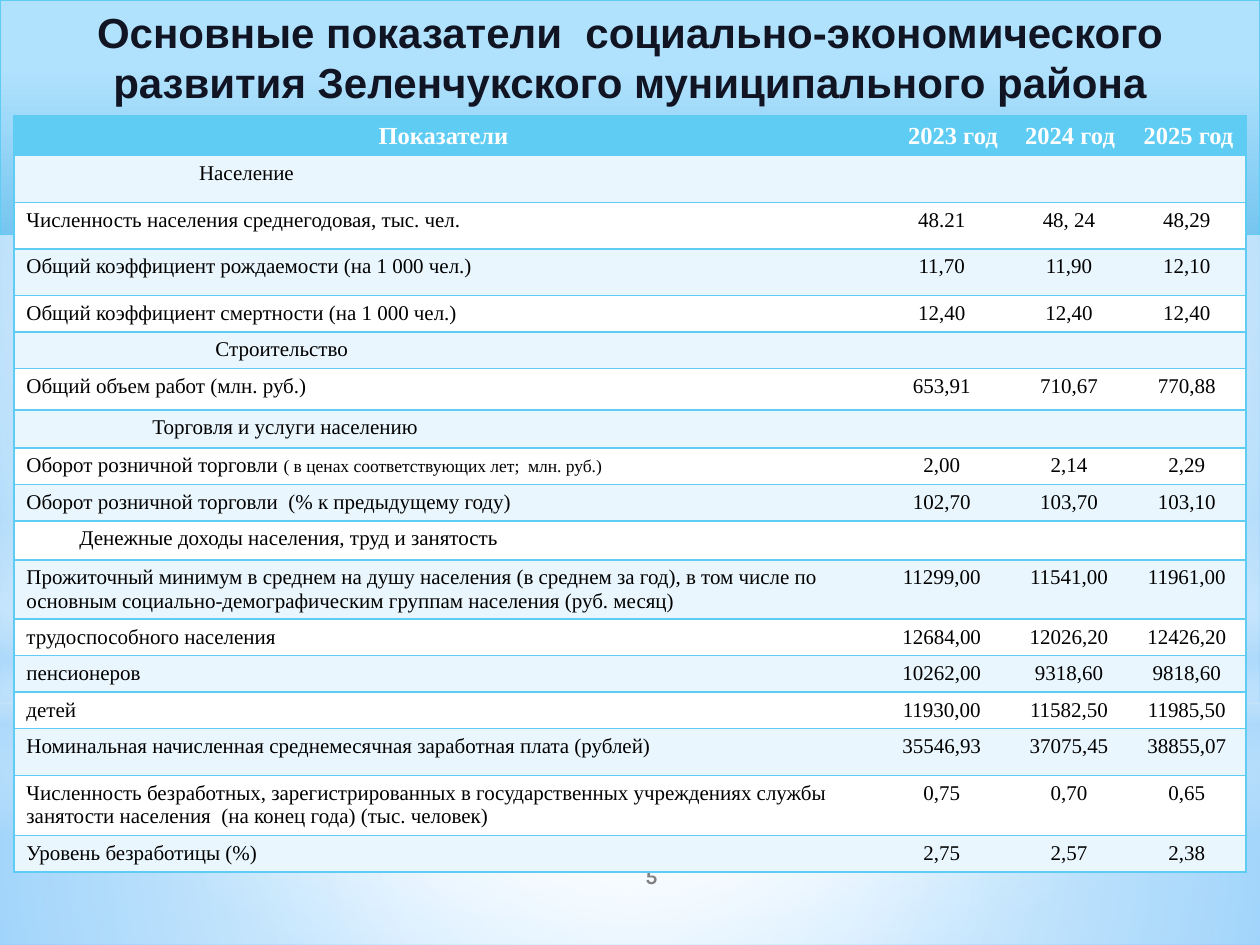
from lxml import etree
from pptx import Presentation
from pptx.dml.color import RGBColor
from pptx.enum.shapes import MSO_SHAPE
from pptx.enum.text import MSO_ANCHOR, MSO_AUTO_SIZE, PP_ALIGN
from pptx.oxml import parse_xml
from pptx.oxml.ns import qn
from pptx.util import Inches, Pt

LEFT, CENTER, RIGHT = PP_ALIGN.LEFT, PP_ALIGN.CENTER, PP_ALIGN.RIGHT
TOP, MIDDLE = MSO_ANCHOR.TOP, MSO_ANCHOR.MIDDLE
RECT, OVAL = MSO_SHAPE.RECTANGLE, MSO_SHAPE.OVAL
NO_AUTOFIT = MSO_AUTO_SIZE.NONE
DRAWING_NS = "http://schemas.openxmlformats.org/drawingml/2006/main"
PLAIN_TABLE_STYLE = "{2D5ABB26-0587-4C30-8999-92F81FD0307C}"

COLORS = {
    "accent": "5ECCF3", "band": "EAF6FD", "white": "FFFFFF", "black": "000000",
    "title": "111422", "number": "808080", "haze": "B4DCFA",
    "title_top": "B1E2FD", "title_bottom": "76C6F1",
    "sky": "9ED5FF", "deep_sky": "5BB9FF",
}

TITLE = "Основные показатели  социально-экономического развития Зеленчукского муниципального района"
PAGE_NUMBER = "5"
CENTERED = (50, 50, 50, 50)

BACKGROUND = [(0, "sky", 100), (60, "white", 100), (100, "deep_sky", 100)]
TITLE_GRADIENT = [(28, "title_top", 100), (100, "title_bottom", 100)]
BACKDROP = [
    (RECT, (0, 5.58, 10, 1.92), [(0, "white", 91), (37, "white", 76), (100, "haze", 79)], CENTERED),
    (RECT, (0, 0, 10, 5.58), [(0, "white", 89), (48, "white", 62), (100, "haze", 79)], CENTERED),
    (RECT, (0, 4.12, 10, 2.5), [(0, "white", 0), (29, "white", 30), (45, "haze", 40),
                                (55, "white", 26), (65, "haze", 60), (100, "white", 0)], None),
    (OVAL, (0, 1.75, 10, 5.58), [(0, "white", 100), (56, "white", 0)], CENTERED),
]

COLUMN_WIDTHS = [6.82, 1.09, 0.93, 0.94]
HEADER = ["Показатели", "2023 год", "2024 год", "2025 год"]
SECTION_INDENTS = {
    "Население": 1.37,
    "Строительство": 1.5,
    "Торговля и услуги населению": 1.0,
    "Денежные доходы населения, труд и занятость": 0.42,
}
SMALL_NOTE = "( в ценах соответствующих лет;  млн. руб.)"
INDICATORS = [
    (0.37, "Население"),
    (0.37, "Численность населения среднегодовая, тыс. чел.", "48.21", "48, 24", "48,29"),
    (0.37, "Общий коэффициент рождаемости (на 1 000 чел.)", "11,70", "11,90", "12,10"),
    (0.29, "Общий коэффициент смертности (на 1 000 чел.)", "12,40", "12,40", "12,40"),
    (0.29, "Строительство"),
    (0.33, "Общий объем работ (млн. руб.)", "653,91", "710,67", "770,88"),
    (0.3, "Торговля и услуги населению"),
    (0.29, "Оборот розничной торговли ", "2,00", "2,14", "2,29"),
    (0.29, "Оборот розничной торговли  (% к предыдущему году)", "102,70", "103,70", "103,10"),
    (0.31, "Денежные доходы населения, труд и занятость"),
    (0.47, "Прожиточный минимум в среднем на душу населения (в среднем за год), в том числе по "
           "основным социально-демографическим группам населения (руб. месяц)",
     "11299,00", "11541,00", "11961,00"),
    (0.29, "трудоспособного населения", "12684,00", "12026,20", "12426,20"),
    (0.29, "пенсионеров", "10262,00", "9318,60", "9818,60"),
    (0.29, "детей", "11930,00", "11582,50", "11985,50"),
    (0.37, "Номинальная начисленная среднемесячная заработная плата (рублей)",
     "35546,93", "37075,45", "38855,07"),
    (0.48, "Численность безработных, зарегистрированных в государственных учреждениях службы "
           "занятости населения  (на конец года) (тыс. человек)", "0,75", "0,70", "0,65"),
    (0.29, "Уровень безработицы (%)", "2,75", "2,57", "2,38"),
]


def rgb(name):
    return RGBColor.from_string(COLORS[name])


def set_gradient(fill, owner, stops, focus=None):
    fill.gradient()
    stop_xml = "".join(
        f'<a:gs pos="{pos * 1000}"><a:srgbClr val="{COLORS[color]}">'
        f'<a:alpha val="{alpha * 1000}"/></a:srgbClr></a:gs>'
        for pos, color, alpha in stops)
    if focus:
        sides = " ".join(f'{side}="{value * 1000}"' for side, value in zip("ltrb", focus))
        shade = f'<a:path path="circle"><a:fillToRect {sides}/></a:path>'
    else:
        shade = '<a:lin ang="5400000" scaled="0"/>'
    gradient = parse_xml(f'<a:gradFill xmlns:a="{DRAWING_NS}" rotWithShape="1">'
                         f'<a:gsLst>{stop_xml}</a:gsLst>{shade}</a:gradFill>')
    current = next(owner.iter(qn("a:gradFill")))
    current.getparent().replace(current, gradient)


def format_runs(paragraph, font_name, size, color, bold=False, align=LEFT):
    paragraph.alignment = align
    for run in paragraph.runs:
        run.font.name = font_name
        run.font.size = Pt(size)
        run.font.bold = bold
        run.font.color.rgb = rgb(color)


def add_borders(cell, sides):
    properties = cell._tc.get_or_add_tcPr()
    for side in sides:
        border = etree.SubElement(properties, qn(f"a:ln{side}"), w=str(Pt(1)))
        solid = etree.SubElement(border, qn("a:solidFill"))
        etree.SubElement(solid, qn("a:srgbClr"), val=COLORS["accent"])


def fill_cell(cell, text, fill, sides, size, color, bold, align):
    add_borders(cell, sides)
    cell.fill.solid()
    cell.fill.fore_color.rgb = rgb(fill)
    paragraph = cell.text_frame.paragraphs[0]
    paragraph.text = text
    format_runs(paragraph, "Times New Roman", size, color, bold, align)
    return paragraph


def add_indicator_table(slide):
    heights = [0.31] + [row[0] for row in INDICATORS]
    table = slide.shapes.add_table(
        len(heights), len(HEADER), Inches(0.11), Inches(0.92),
        Inches(sum(COLUMN_WIDTHS)), Inches(sum(heights))).table
    table._tbl.tblPr.find(qn("a:tableStyleId")).text = PLAIN_TABLE_STYLE
    for column, width in zip(table.columns, COLUMN_WIDTHS):
        column.width = Inches(width)
    for row, height in zip(table.rows, heights):
        row.height = Inches(height)

    last = len(HEADER) - 1
    edges = [(["L"] if c == 0 else []) + (["R"] if c == last else []) + ["T", "B"]
             for c in range(len(HEADER))]
    for c, year in enumerate(HEADER):
        fill_cell(table.cell(0, c), year, "accent", edges[c], 14, "white", True,
                  RIGHT if c else CENTER)

    for r, (_, label, *values) in enumerate(INDICATORS, 1):
        fill = "band" if r % 2 else "white"
        if not values:
            table.cell(r, 0).merge(table.cell(r, last))
        for c, text in enumerate([label] + (values or [""] * last)):
            sides = ["L", "R", "T", "B"] if c == 0 and not values else edges[c]
            paragraph = fill_cell(table.cell(r, c), text, fill, sides, 12, "black", False,
                                  CENTER if c else LEFT)
            if c == 0 and not values:
                paragraph._p.get_or_add_pPr().set("marL", str(Inches(SECTION_INDENTS[label])))
            if c == 0 and label.endswith(" "):
                paragraph.add_run().text = SMALL_NOTE
                format_runs(paragraph, "Times New Roman", 12, "black")
                paragraph.runs[-1].font.size = Pt(10)


def main():
    prs = Presentation()
    prs.slide_width, prs.slide_height = Inches(10), Inches(7.5)
    slide = prs.slides.add_slide(prs.slide_layouts[5])
    set_gradient(slide.background.fill, slide._element, BACKGROUND, (20, 10, 20, 60))

    for preset, box, stops, focus in BACKDROP:
        layer = slide.shapes.add_shape(preset, *map(Inches, box))
        layer.shadow.inherit = False
        layer.line.fill.background()
        set_gradient(layer.fill, layer._element, stops, focus)

    number = slide.shapes.add_textbox(Inches(4.17), Inches(6.75), Inches(2), Inches(0.4))
    number.text_frame.word_wrap = True
    number.text_frame.vertical_anchor = MIDDLE
    number.text_frame.text = PAGE_NUMBER
    format_runs(number.text_frame.paragraphs[0], "Karla", 12, "number", True, CENTER)

    title = slide.shapes.title
    slide.shapes._spTree.append(title._element)
    title.left, title.top, title.width, title.height = map(Inches, (0, 0, 10, 1.86))
    set_gradient(title.fill, title._element, TITLE_GRADIENT)
    title.line.color.rgb = rgb("accent")
    title.line.width = Pt(0.75)
    title.text_frame.text = TITLE
    title.text_frame.word_wrap = True
    title.text_frame.auto_size = NO_AUTOFIT
    title.text_frame.vertical_anchor = TOP
    format_runs(title.text_frame.paragraphs[0], "Arial", 24, "title", True, CENTER)

    add_indicator_table(slide)
    prs.save("out.pptx")


if __name__ == "__main__":
    main()
